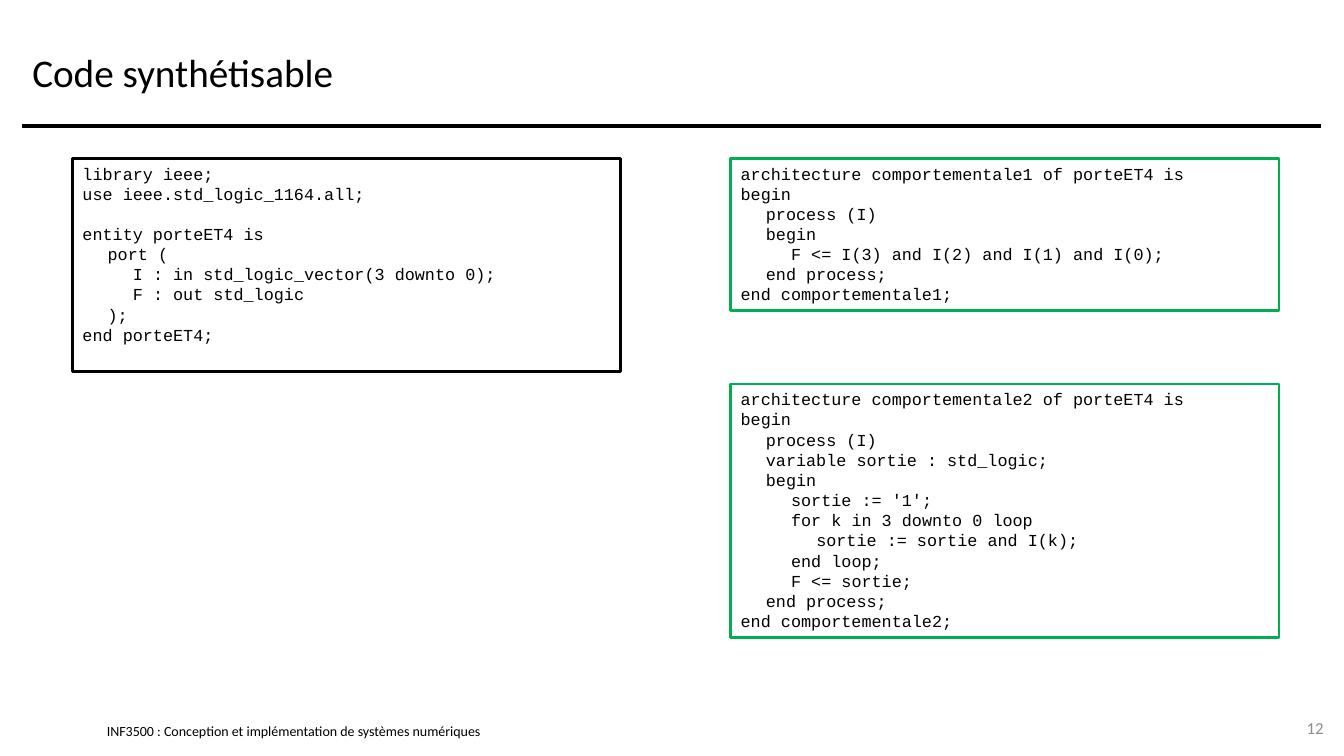
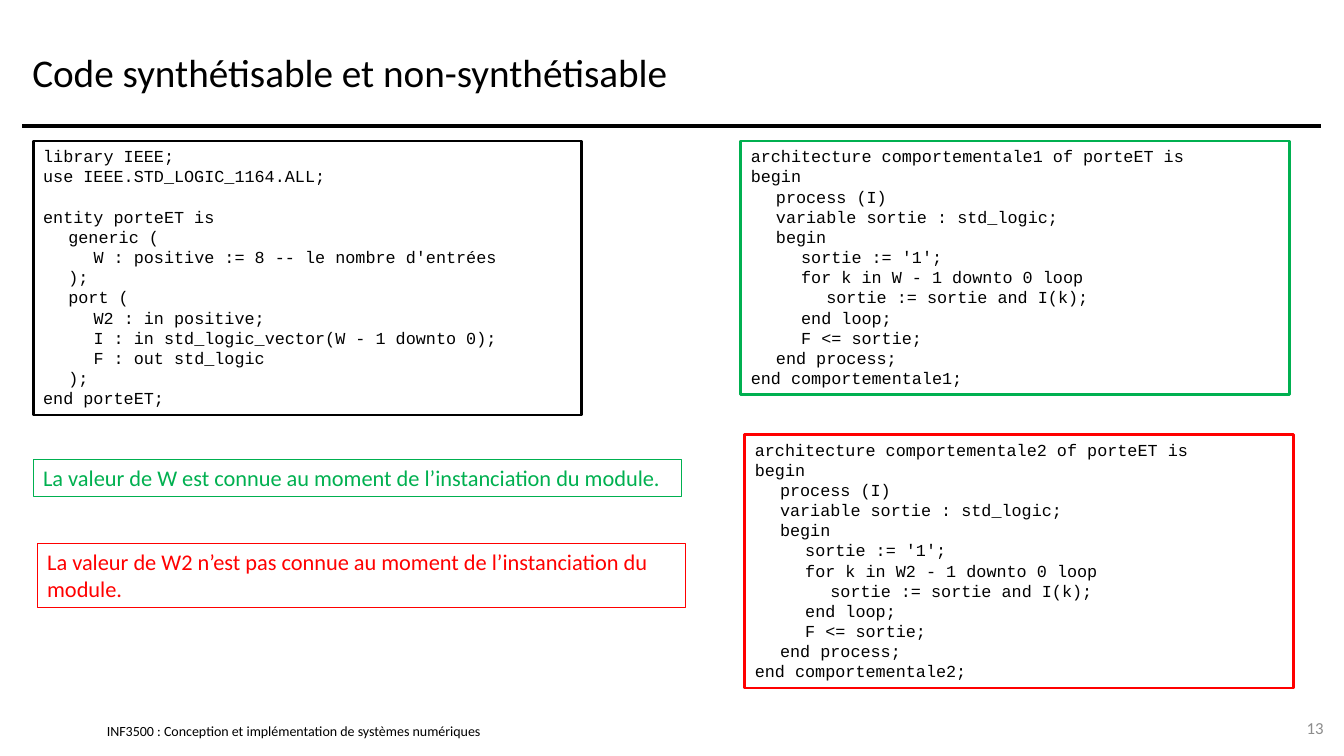
from pptx import Presentation
from pptx.dml.color import RGBColor
from pptx.enum import shapes, text
from pptx.oxml import ns
from pptx.util import Pt
from lxml import etree

BLACK = RGBColor(0, 0, 0)
WHITE = RGBColor(255, 255, 255)
GRAY = RGBColor(0x8C, 0x8C, 0x8C)
GREEN = RGBColor(0, 0xB0, 0x50)
RED = RGBColor(255, 0, 0)
SANS, MONO = "Calibri", "Courier New"
EDGE, RULE, SPAN = 15.84, 90, 928.08
CODE_W, NOTE_W = 391.68, 462.96
PITCH, ROW, PAD, TAB = 14.4, 14.5, 7.2, 18

FOOT = "INF3500 : Conception et implémentation de systèmes numériques"

ENTITY_4 = """library ieee;
use ieee.std_logic_1164.all;

entity porteET4 is
  port (
    I : in std_logic_vector(3 downto 0);
    F : out std_logic
  );
end porteET4;"""

ENTITY_W = """library IEEE;
use IEEE.STD_LOGIC_1164.ALL;

entity porteET is
  generic (
    W : positive := 8 -- le nombre d'entrées
  );
  port (
    W2 : in positive;
    I : in std_logic_vector(W - 1 downto 0);
    F : out std_logic
  );
end porteET;"""

DIRECT = """architecture comportementale1 of porteET4 is
begin
  process (I)
  begin
    F <= I(3) and I(2) and I(1) and I(0);
  end process;
end comportementale1;"""

LOOP = """architecture {name} of {unit} is
begin
  process (I)
  variable sortie : std_logic;
  begin
    sortie := '1';
    for k in {high} downto 0 loop
      sortie := sortie and I(k);
    end loop;
    F <= sortie;
  end process;
end {name};"""


def style(para, font, size, color, align=text.PP_ALIGN.LEFT):
    para.alignment = align
    for run in para.runs:
        run.font.name = font
        run.font.size = Pt(size)
        run.font.color.rgb = color


def label(slide, box, words, size, color, align=text.PP_ALIGN.LEFT, inset=True):
    frame = slide.shapes.add_textbox(*map(Pt, box)).text_frame
    frame.word_wrap = True
    frame.vertical_anchor = text.MSO_ANCHOR.MIDDLE
    if not inset:
        frame.margin_left = frame.margin_right = 0
        frame.margin_top = frame.margin_bottom = 0
    frame.text = words
    style(frame.paragraphs[0], SANS, size, color, align)


def panel(slide, box, color, width):
    shape = slide.shapes.add_shape(shapes.MSO_SHAPE.RECTANGLE, *map(Pt, box))
    shape.shadow.inherit = False
    shape.fill.solid()
    shape.fill.fore_color.rgb = WHITE
    shape.line.color.rgb = color
    shape.line.width = Pt(width)
    frame = shape.text_frame
    frame.word_wrap = True
    frame.vertical_anchor = text.MSO_ANCHOR.TOP
    return frame


def add_tabs(para):
    stops = etree.SubElement(para._p.get_or_add_pPr(), ns.qn("a:tabLst"))
    for level in range(1, 6):
        etree.SubElement(stops, ns.qn("a:tab"), pos=str(Pt(level * TAB)), algn="l")


def code(slide, left, top, body, color, extra=0):
    lines = body.split("\n")
    high = (len(lines) + extra) * ROW + PAD
    frame = panel(slide, (left, top, CODE_W, high), color, 2)
    frame.text = "\n".join(line.replace("  ", "\t") for line in lines if line)
    gaps = [not last for last, line in zip(["-"] + lines, lines) if line]
    for para, gap in zip(frame.paragraphs, gaps):
        add_tabs(para)
        para.line_spacing = Pt(PITCH)
        if gap:
            para.space_before = Pt(PITCH)
        style(para, MONO, 12, BLACK)


def note(slide, left, top, high, words, color):
    frame = panel(slide, (left, top, NOTE_W, high), color, 0.75)
    frame.text = words
    style(frame.paragraphs[0], SANS, 16, color)


def base(deck, head, page):
    slide = deck.slides.add_slide(deck.slide_layouts.get_by_name("Title Only"))
    title = slide.shapes.title
    title.left, title.top = Pt(EDGE), Pt(12.24)
    title.width, title.height = Pt(SPAN), Pt(77.76)
    title.text_frame.text = head
    title.text_frame.vertical_anchor = text.MSO_ANCHOR.MIDDLE
    style(title.text_frame.paragraphs[0], SANS, 28, BLACK)
    rule = slide.shapes.add_connector(
        shapes.MSO_CONNECTOR.STRAIGHT, Pt(EDGE), Pt(RULE), Pt(EDGE + SPAN), Pt(RULE))
    rule.line.color.rgb = BLACK
    rule.line.width = Pt(3)
    etree.SubElement(rule._element.spPr, ns.qn("a:effectLst"))
    label(slide, (76.32, 516.24, 367.92, 12.24), FOOT, 10, BLACK, inset=False)
    label(slide, (904.32, 505.44, 48.24, 28.8), str(page), 12, GRAY,
          text.PP_ALIGN.RIGHT)
    return slide


def fixed(deck):
    slide = base(deck, "Code synthétisable", 12)
    top, right = 113.04, 522
    loop = LOOP.format(name="comportementale2", unit="porteET4", high="3")
    code(slide, 51.84, top, ENTITY_4, BLACK, extra=1)
    code(slide, right, top, DIRECT, GREEN)
    code(slide, right, 274.32, loop, GREEN)


def generic(deck):
    slide = base(deck, "Code synthétisable et non-synthétisable", 13)
    left, top = 23.76, 100.8
    code(slide, left, top, ENTITY_W, BLACK)
    cases = [(529.2, top, "W", GREEN), (532.08, 310.32, "W2", RED)]
    for num, (x, y, bound, color) in enumerate(cases, 1):
        loop = LOOP.format(name=f"comportementale{num}", unit="porteET",
                           high=f"{bound} - 1")
        code(slide, x, y, loop, color)
    note(slide, left, 328.32, 26.64,
         "La valeur de W est connue au moment de l’instanciation du module.", GREEN)
    note(slide, 26.64, 388.08, 46.08,
         "La valeur de W2 n’est pas connue au moment de l’instanciation du module.", RED)


def main():
    deck = Presentation()
    deck.slide_width, deck.slide_height = Pt(960), Pt(540)
    fixed(deck)
    generic(deck)
    deck.save("out.pptx")


if __name__ == "__main__":
    main()
